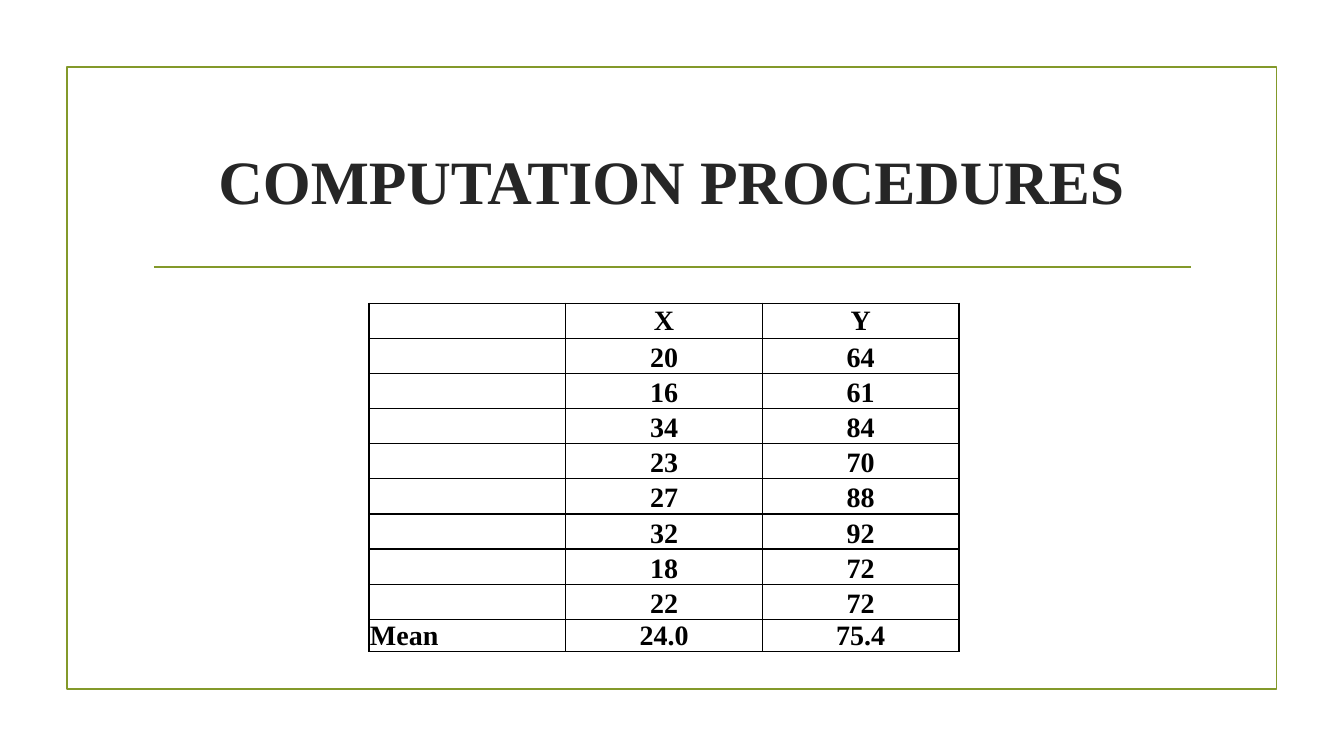
"""Build the slide of computation procedures with its table of X and Y values."""
from dataclasses import dataclass

from pptx import Presentation
from pptx.dml.color import RGBColor as Color
from pptx.enum.shapes import MSO_CONNECTOR as Connector, MSO_SHAPE as Preset
from pptx.enum.text import MSO_ANCHOR as Anchor, PP_ALIGN as Align
from pptx.oxml.ns import qn
from pptx.oxml.xmlchemy import OxmlElement
from pptx.slide import Slide
from pptx.table import _Cell as Cell
from pptx.text.text import _Paragraph as Paragraph
from pptx.util import Pt


@dataclass(frozen=True)
class Theme:
    font: str = "Times New Roman"
    accent: Color = Color(0x83, 0x99, 0x2A)
    title: Color = Color(0x26, 0x26, 0x26)
    ink: Color = Color(0, 0, 0)
    paper: Color = Color(0xFF, 0xFF, 0xFF)
    title_size: float = 44
    table_size: float = 20
    rule_width: float = 1.25
    border_width: float = 1


@dataclass(frozen=True)
class Area:
    left: float
    top: float
    width: float
    height: float

    def lengths(self) -> tuple[Pt, Pt, Pt, Pt]:
        return Pt(self.left), Pt(self.top), Pt(self.width), Pt(self.height)


@dataclass(frozen=True)
class TableRow:
    label: str
    x: str
    y: str
    height: float = 25.1
    anchor: Anchor = Anchor.BOTTOM


THEME = Theme()
FRAME = Area(47.8, 48, 864, 444.2)
TITLE = Area(102, 77, 756, 103)
TABLE = Area(263.6, 216.6, 421.5, 248.9)
RULE_LEFT, RULE_RIGHT, RULE_TOP = 110, 850.5, 190.6
SAMPLES = [(20, 64), (16, 61), (34, 84), (23, 70),
           (27, 88), (32, 92), (18, 72), (22, 72)]
ROWS = [
    TableRow("", "X", "Y", anchor=Anchor.MIDDLE),
    *(TableRow("", str(x), str(y)) for x, y in SAMPLES),
    TableRow("Mean", "24.0", "75.4", height=23),
]


def style_paragraph(para: Paragraph, size: float, color: Color, align: Align) -> None:
    para.alignment = align
    para.font.name = THEME.font
    para.font.size = Pt(size)
    para.font.bold = True
    para.font.color.rgb = color


def draw_frame(slide: Slide) -> None:
    frame = slide.shapes.add_shape(Preset.RECTANGLE, *FRAME.lengths())
    frame.shadow.inherit = False
    frame.fill.background()
    frame.line.color.rgb = THEME.accent
    frame.line.width = Pt(THEME.rule_width)


def draw_rule(slide: Slide) -> None:
    rule = slide.shapes.add_connector(
        Connector.STRAIGHT, Pt(RULE_LEFT), Pt(RULE_TOP), Pt(RULE_RIGHT), Pt(RULE_TOP))
    rule.line.color.rgb = THEME.accent
    rule.line.width = Pt(THEME.rule_width)
    rule._element.spPr.append(OxmlElement("a:effectLst"))


def write_title(slide: Slide, text: str) -> None:
    title = slide.shapes.title
    title.left, title.top, title.width, title.height = TITLE.lengths()
    box = title.text_frame
    box.text = text
    box.word_wrap = True
    box.vertical_anchor = Anchor.MIDDLE
    style_paragraph(box.paragraphs[0], THEME.title_size, THEME.title, Align.CENTER)


def add_borders(cell: Cell) -> None:
    properties = cell._tc.get_or_add_tcPr()
    for side in ("a:lnL", "a:lnR", "a:lnT", "a:lnB"):
        border = OxmlElement(side)
        border.set("w", str(Pt(THEME.border_width)))
        fill = OxmlElement("a:solidFill")
        color = OxmlElement("a:srgbClr")
        color.set("val", str(THEME.ink))
        fill.append(color)
        border.append(fill)
        properties.append(border)


def fill_cell(cell: Cell, text: str, align: Align, anchor: Anchor) -> None:
    add_borders(cell)
    cell.fill.solid()
    cell.fill.fore_color.rgb = THEME.paper
    cell.margin_left = cell.margin_right = cell.margin_top = Pt(0.7)
    cell.margin_bottom = Pt(0)
    cell.vertical_anchor = anchor
    cell.text = text
    para = cell.text_frame.paragraphs[0]
    style_paragraph(para, THEME.table_size, THEME.ink, align)
    if not text:
        ending = para._p.get_or_add_endParaRPr()
        ending.set("sz", str(int(THEME.table_size * 100)))
        latin = OxmlElement("a:latin")
        latin.set("typeface", THEME.font)
        ending.append(latin)


def draw_table(slide: Slide) -> None:
    table = slide.shapes.add_table(len(ROWS), 3, *TABLE.lengths()).table
    table.first_row = table.horz_banding = False
    table._tbl.tblPr.find(qn("a:tableStyleId")).text = "{2D5ABB26-0587-4C30-8999-92F81FD0307C}"
    for column in table.columns:
        column.width = Pt(TABLE.width / 3)
    for index, row in enumerate(ROWS):
        table.rows[index].height = Pt(row.height)
        for column, text in enumerate((row.label, row.x, row.y)):
            align = Align.CENTER if column else Align.LEFT
            fill_cell(table.cell(index, column), text, align, row.anchor)


def main() -> None:
    deck = Presentation()
    deck.slide_width, deck.slide_height = Pt(960), Pt(540)
    slide = deck.slides.add_slide(deck.slide_layouts[5])
    slide.background.fill.solid()
    slide.background.fill.fore_color.rgb = THEME.paper
    draw_frame(slide)
    draw_rule(slide)
    write_title(slide, "COMPUTATION PROCEDURES")
    draw_table(slide)
    deck.save("out.pptx")


if __name__ == "__main__":
    main()
